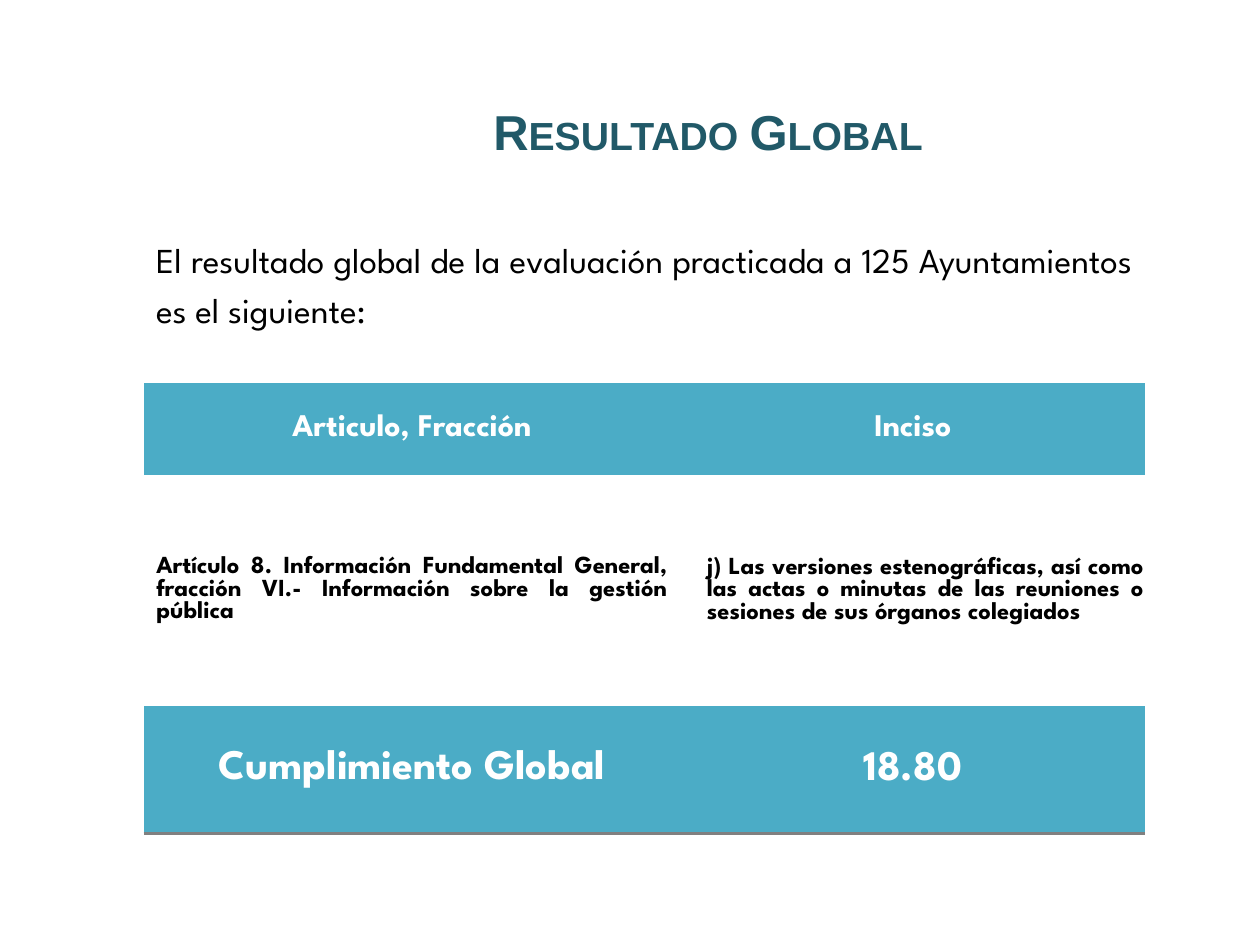
from lxml import etree
from pptx import Presentation
from pptx import util as u
from pptx.dml.color import RGBColor
from pptx.enum import shapes, text
from pptx.oxml.ns import qn

COLORS = {"title": "215968", "band": "4BACC6", "rule": "808080",
          "ink": "000000", "paper": "FFFFFF"}
FONT = "League Spartan"
NO_GRID = "{2D5ABB26-0587-4C30-8999-92F81FD0307C}"
LEFT, WIDTH = 0.114, 0.795
ALIGN = text.PP_ALIGN


def rgb(name):
    return RGBColor.from_string(COLORS[name])


class Deck:
    """Holds the style and the current slide; places are shares of its size."""

    def __init__(self, width, height):
        self.prs = Presentation()
        self.prs.slide_width, self.prs.slide_height = u.Inches(width), u.Inches(height)
        self.s = self.prs.slides.add_slide(self.prs.slide_layouts[5])

    def box(self, x, y, w, h):
        sw, sh = self.prs.slide_width, self.prs.slide_height
        return int(x * sw), int(y * sh), int(w * sw), int(h * sh)

    def put_text(self, tf, words, size, color, align, bold=True, font=FONT, **layout):
        tf.word_wrap = True
        p = tf.paragraphs[0]
        for name, value in {"alignment": align, **layout}.items():
            setattr(p, name, value)
        r = p.add_run()
        r.text = words
        for name, value in {"size": u.Pt(size), "bold": bold, "name": font}.items():
            setattr(r.font, name, value)
        r.font.color.rgb = rgb(color)
        return r

    def title(self, words, place):
        sp = self.s.shapes.title
        sp.left, sp.top, sp.width, sp.height = self.box(*place)
        sp.text_frame.vertical_anchor = text.MSO_ANCHOR.MIDDLE
        r = self.put_text(sp.text_frame, words, 28, "title", ALIGN.CENTER, font="Arial")
        r.font._element.set("cap", "small")

    def panel(self, words, place):
        sp = self.s.shapes.add_shape(shapes.MSO_SHAPE.RECTANGLE, *self.box(*place))
        sp.shadow.inherit = False
        sp.fill.solid()
        sp.fill.fore_color.rgb = rgb("paper")
        sp.line.fill.background()
        sp.text_frame.vertical_anchor = text.MSO_ANCHOR.TOP
        self.put_text(sp.text_frame, words, 20, "ink", ALIGN.JUSTIFY, bold=False,
                      line_spacing=1.2)

    def table(self, rows, place, col_shares, row_shares):
        frame = self.s.shapes.add_table(len(rows), len(col_shares), *self.box(*place))
        tbl = frame.table
        tbl.first_row = tbl.horz_banding = False
        frame._element.find(".//" + qn("a:tableStyleId")).text = NO_GRID
        width, height = frame.width, frame.height
        for col, share in zip(tbl.columns, col_shares):
            col.width = int(width * share)
        for row, share in zip(tbl.rows, row_shares):
            row.height = int(height * share)
        for i, (style, cells) in enumerate(rows):
            for j, (words, extra) in enumerate(cells):
                self.cell(tbl.cell(i, j), words, **style, **extra)

    def cell(self, cell, words, fill=None, rule=False, tight=False, indent=0, **style):
        cell.vertical_anchor = text.MSO_ANCHOR.MIDDLE
        if tight:
            margins = {"left": 0.01, "top": 0.01, "right": 0.01, "bottom": 0}
            for side, inches in margins.items():
                setattr(cell, "margin_" + side, u.Inches(inches))
        self.put_text(cell.text_frame, words, **style)
        if indent:
            pPr = cell.text_frame.paragraphs[0]._p.get_or_add_pPr()
            pPr.set("marL", str(u.Inches(indent)))
            pPr.set("indent", "0")
        if rule:
            tcPr = cell._tc.get_or_add_tcPr()
            ln = etree.SubElement(tcPr, qn("a:lnB"), w=str(u.Pt(2)))
            solid = etree.SubElement(ln, qn("a:solidFill"))
            etree.SubElement(solid, qn("a:srgbClr"), val=COLORS["rule"])
        if fill:
            cell.fill.solid()
            cell.fill.fore_color.rgb = rgb(fill)
        else:
            cell.fill.background()


def main():
    deck = Deck(10, 7.5)

    # Heading and introduction
    deck.title("Resultado Global", (0.193, 0.039, 0.738, 0.2))
    deck.panel("El resultado global de la evaluación practicada a 125 Ayuntamientos "
               "es el siguiente:", (LEFT, 0.237, WIDTH, 0.131))

    # Results table: header, assessed item, total
    band = {"color": "paper", "align": ALIGN.CENTER, "fill": "band"}
    header = {**band, "size": 18}
    item = {"size": 14, "color": "ink", "align": ALIGN.JUSTIFY}
    total = {**band, "size": 24, "rule": True}
    clause = {"tight": True, "indent": 0.2, "space_after": u.Pt(6)}
    rows = [
        (header, [("Articulo, Fracción", {}), ("Inciso", {})]),
        (item, [("Artículo 8. Información Fundamental General, fracción VI.- "
                 "Información sobre la gestión pública", {}),
                ("j) Las versiones estenográficas, así como las actas o minutas de "
                 "las reuniones o sesiones de sus órganos colegiados", clause)]),
        (total, [("Cumplimiento Global", {}), ("18.80", {"tight": True})]),
    ]
    deck.table(rows, (LEFT, 0.405, WIDTH, 0.477),
               [4.26 / 7.95, 3.69 / 7.95], [0.73 / 3.58, 1.84 / 3.58, 1.01 / 3.58])

    deck.prs.save("out.pptx")


if __name__ == "__main__":
    main()
